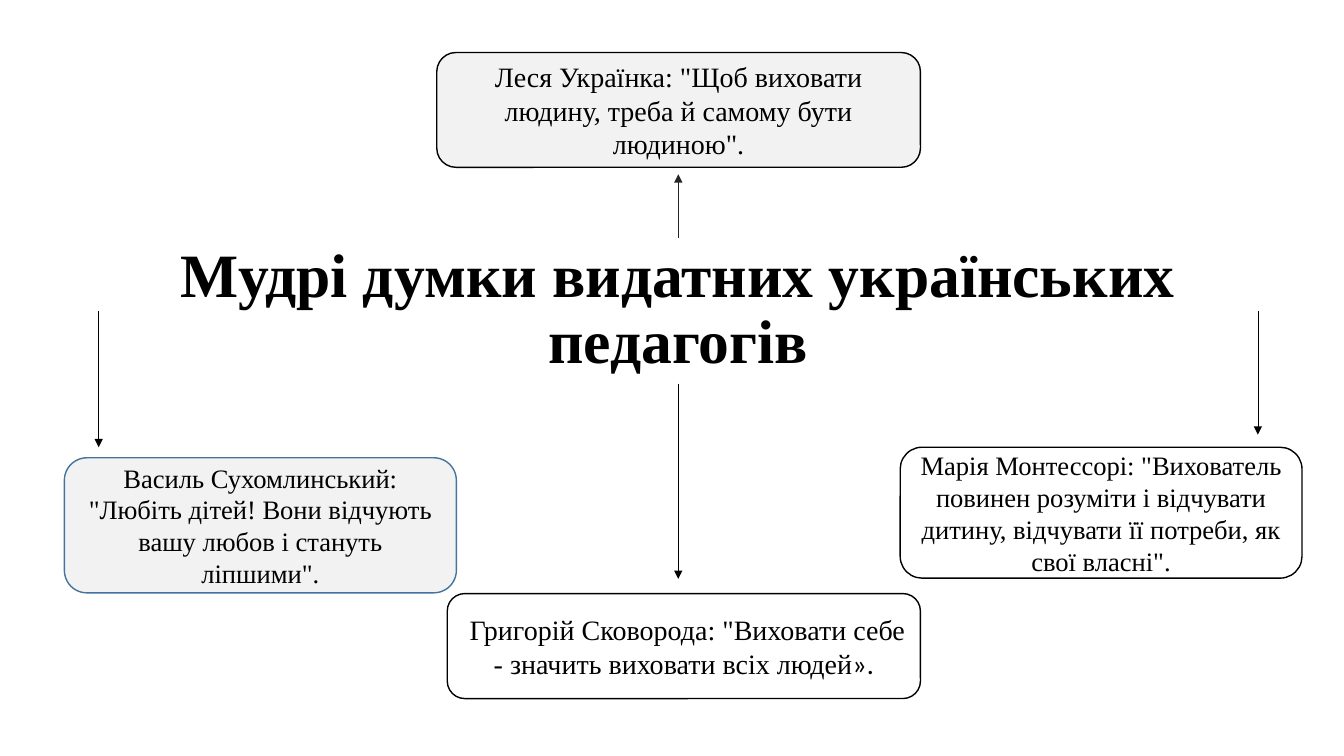
import pptx
import pptx.util
import pptx.dml.color
import pptx.enum.shapes
import pptx.enum.text
import pptx.oxml
import pptx.oxml.ns

Pt = pptx.util.Pt
RGB = pptx.dml.color.RGBColor
MID = pptx.enum.text.MSO_ANCHOR.MIDDLE
MIDDLE = pptx.enum.text.PP_ALIGN.CENTER
ROUND = pptx.enum.shapes.MSO_SHAPE.ROUNDED_RECTANGLE
LINE = pptx.enum.shapes.MSO_CONNECTOR.STRAIGHT
BLACK = RGB(0x00, 0x00, 0x00)
DARK = RGB(0x26, 0x26, 0x26)
GREY = RGB(0xF2, 0xF2, 0xF2)
WHITE = RGB(0xFF, 0xFF, 0xFF)
BLUE = RGB(0x43, 0x73, 0x9E)
SERIF = "Times New Roman"


def style(run, size, face=SERIF):
    run.font.size = Pt(size)
    run.font.name = face
    run.font.color.rgb = BLACK


deck = pptx.Presentation()
deck.slide_width = Pt(960)
deck.slide_height = Pt(540)
slide = deck.slides.add_slide(deck.slide_layouts[5])

title = slide.shapes.title
title.left, title.top, title.width, title.height = Pt(70.5), Pt(170), Pt(828), Pt(104)
frame = title.text_frame
frame.text = "Мудрі думки видатних українських педагогів"
frame.word_wrap = True
frame.auto_size = pptx.enum.text.MSO_AUTO_SIZE.NONE
frame.vertical_anchor = MID
head = frame.paragraphs[0]
head.alignment = MIDDLE
head.line_spacing = 0.9
style(head.runs[0], 44)
head.runs[0].font.bold = True

quotes = [
    (312, 37.5, 345.5, 82, GREY, BLACK, 20,
     "Леся Українка: \"Щоб виховати людину, треба й самому бути людиною\".", ""),
    (46, 327, 280, 96.5, GREY, BLUE, 19,
     "Василь Сухомлинський: \"Любіть дітей! Вони відчують вашу любов і стануть ліпшими\".", ""),
    (319.5, 424, 338, 75, WHITE, BLACK, 20,
     " Григорій Сковорода: \"Виховати себе - значить виховати всіх людей", "»."),
    (643, 319.5, 287, 93.5, WHITE, BLACK, 19,
     "Марія Монтессорі: \"Вихователь повинен розуміти і відчувати дитину, "
     "відчувати її потреби, як свої власні\".", ""),
]
for left, top, width, height, fill, edge, size, quote, tail in quotes:
    box = slide.shapes.add_shape(ROUND, Pt(left), Pt(top), Pt(width), Pt(height))
    box.shadow.inherit = False
    box.fill.solid()
    box.fill.fore_color.rgb = fill
    box.line.color.rgb = edge
    box.line.width = Pt(1)
    box.text_frame.text = quote
    box.text_frame.word_wrap = True
    box.text_frame.vertical_anchor = MID
    para = box.text_frame.paragraphs[0]
    para.alignment = MIDDLE
    style(para.runs[0], size)
    if tail:
        end = para.add_run()
        end.text = tail
        style(end, size, "Calibri")

arrows = [
    (0, 484.5, 170, 124.5, DARK),
    (1, 70.5, 222, 319.5, BLACK),
    (2, 484.5, 274, 413.5, BLACK),
    (3, 898.5, 222, 310.5, BLACK),
]
for side, x, start, stop, color in arrows:
    arrow = slide.shapes.add_connector(LINE, Pt(x), Pt(start), Pt(x), Pt(stop))
    arrow.begin_connect(title, side)
    arrow.line.color.rgb = color
    arrow.line.width = Pt(0.5)
    tip = pptx.oxml.parse_xml(
        f'<a:tailEnd {pptx.oxml.ns.nsdecls("a")} type="triangle"/>')
    arrow.line._get_or_add_ln().append(tip)
    flat = pptx.oxml.parse_xml(f'<a:effectLst {pptx.oxml.ns.nsdecls("a")}/>')
    arrow._element.spPr.append(flat)

deck.save("out.pptx")
